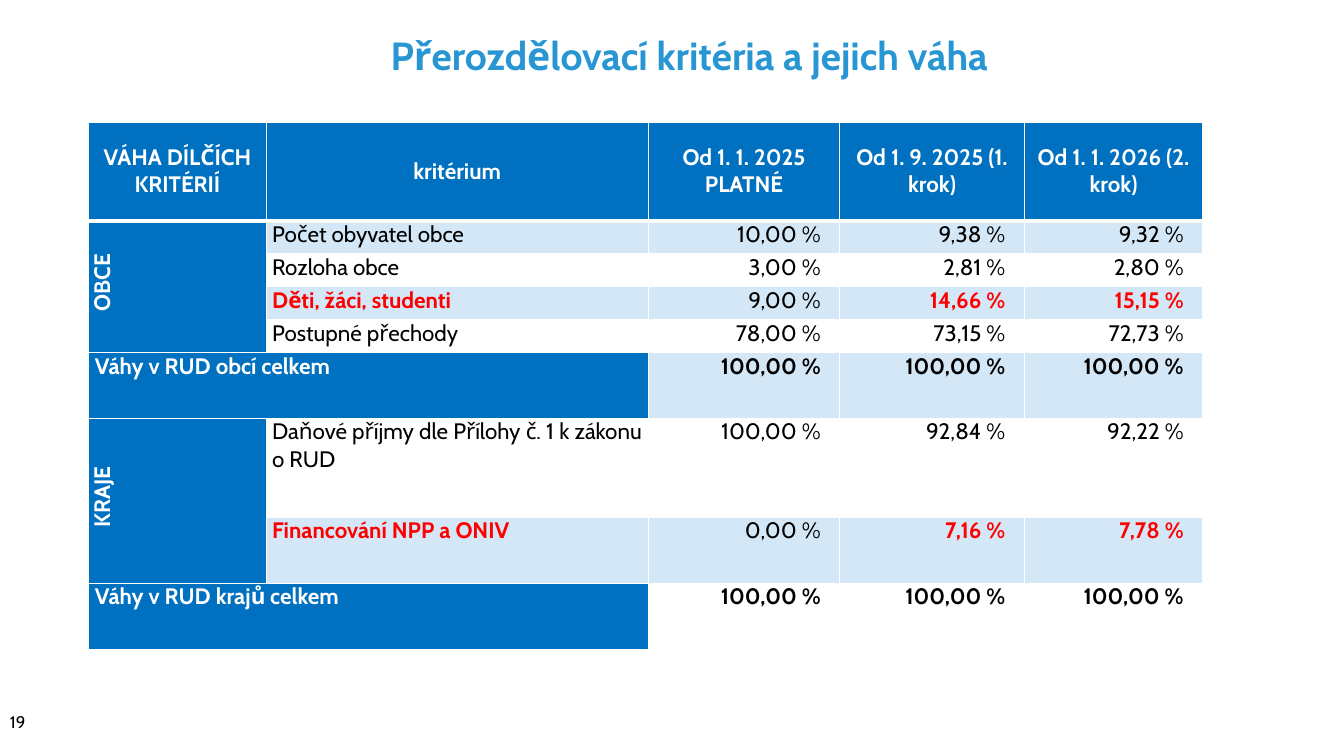
from lxml.etree import SubElement
from pptx import Presentation
from pptx.dml.color import RGBColor
from pptx.enum.text import MSO_ANCHOR as Anchor, PP_ALIGN as Align
from pptx.oxml.ns import qn
from pptx.util import Inches, Pt

TITLE = "Přerozdělovací kritéria a jejich váha"
PAGE_NUMBER = "19"
HEADERS = ["VÁHA DÍLČÍCH KRITÉRIÍ", "kritérium", "Od 1. 1. 2025 PLATNÉ",
           "Od 1. 9. 2025 (1. krok)", "Od 1. 1. 2026 (2. krok)"]
GROUPS = [
    ("OBCE", [
        ("Počet obyvatel obce", "10,00 %", "9,38 %", "9,32 %"),
        ("Rozloha obce", "3,00 %", "2,81 %", "2,80 %"),
        ("Děti, žáci, studenti", "9,00 %", "14,66 %", "15,15 %"),
        ("Postupné přechody", "78,00 %", "73,15 %", "72,73 %"),
    ], ("Váhy v RUD obcí celkem", "100,00 %", "100,00 %", "100,00 %")),
    ("KRAJE", [
        ("Daňové příjmy dle Přílohy č. 1 k zákonu o RUD", "100,00 %", "92,84 %", "92,22 %"),
        ("Financování NPP a ONIV", "0,00 %", "7,16 %", "7,78 %"),
    ], ("Váhy v RUD krajů celkem", "100,00 %", "100,00 %", "100,00 %")),
]
CHANGED = {"Děti, žáci, studenti", "Financování NPP a ONIV"}

FONT = "Cabin"
BLUE, LIGHT, WHITE, BLACK, RED = "0070C0", "D4E7F7", "FFFFFF", "000000", "FF0000"
TITLE_BLUE = "2896D3"
COLUMN_WIDTHS = [1.76, 3.79, 1.9, 1.83, 1.77]
LINE = 0.327
ROW_LINES = [3, 1, 1, 1, 1, 2, 3, 2, 2]
CELL_MARGIN, NUMBER_MARGIN = 0.06, 0.19
TABLE_LEFT, TABLE_TOP = 0.88, 1.21


def color(value):
    return RGBColor.from_string(value)


def style(paragraph, size, ink, bold, alignment):
    paragraph.alignment = alignment
    font = paragraph.font
    font.name, font.size, font.bold = FONT, Pt(size), bold
    font.color.rgb = color(ink)


def add_borders(cell, row):
    properties = cell._tc.get_or_add_tcPr()
    widths = {"L": 1, "R": 1, "T": 3 if row == 1 else 1, "B": 3 if row == 0 else 1}
    for side, width in widths.items():
        line = SubElement(properties, qn(f"a:ln{side}"), w=str(Pt(width)))
        fill = SubElement(line, qn("a:solidFill"))
        SubElement(fill, qn("a:srgbClr"), val=WHITE)


def write(cell, text, ink, bold, alignment, anchor=Anchor.TOP, right=CELL_MARGIN):
    cell.text = text
    cell.vertical_anchor = anchor
    cell.margin_left, cell.margin_right = Inches(CELL_MARGIN), Inches(right)
    cell.margin_top = cell.margin_bottom = 0
    paragraph = cell.text_frame.paragraphs[0]
    paragraph.space_after = Pt(3)
    style(paragraph, 16, ink, bold, alignment)


def write_group(cell, name):
    write(cell, name, WHITE, True, Align.CENTER, Anchor.MIDDLE)
    cell._tc.get_or_add_tcPr().set("vert", "vert270")
    paragraph = cell.text_frame.paragraphs[0]
    paragraph.space_after = Pt(8)
    paragraph._p.get_or_add_pPr().set("marL", str(Inches(0.08)))


def write_numbers(table, row, values, inks, bolds):
    for column, (value, ink, bold) in enumerate(zip(values, inks, bolds), 2):
        write(table.cell(row, column), value, ink, bold, Align.RIGHT, right=NUMBER_MARGIN)


def paint(table):
    for row, table_row in enumerate(table.rows):
        for column, cell in enumerate(table_row.cells):
            add_borders(cell, row)
            solid = row == 0 or column == 0 or cell.is_spanned
            cell.fill.solid()
            cell.fill.fore_color.rgb = color(BLUE if solid else LIGHT if row % 2 else WHITE)


def add_weights(slide):
    heights = [LINE * lines for lines in ROW_LINES]
    table = slide.shapes.add_table(
        len(heights), len(COLUMN_WIDTHS), Inches(TABLE_LEFT), Inches(TABLE_TOP),
        Inches(sum(COLUMN_WIDTHS)), Inches(sum(heights))).table
    table.first_row = table.horz_banding = False
    for column, width in zip(table.columns, COLUMN_WIDTHS):
        column.width = Inches(width)
    for row, height in zip(table.rows, heights):
        row.height = Inches(height)
    for column, header in enumerate(HEADERS):
        write(table.cell(0, column), header, WHITE, True, Align.CENTER, Anchor.MIDDLE)

    row = 1
    for name, criteria, (total_name, *totals) in GROUPS:
        table.cell(row, 0).merge(table.cell(row + len(criteria) - 1, 0))
        write_group(table.cell(row, 0), name)
        for criterion, *values in criteria:
            changed = criterion in CHANGED
            ink = RED if changed else BLACK
            write(table.cell(row, 1), criterion, ink, changed, Align.JUSTIFY)
            write_numbers(table, row, values, [BLACK, ink, ink], [False, changed, changed])
            row += 1
        table.cell(row, 0).merge(table.cell(row, 1))
        write(table.cell(row, 0), total_name, WHITE, True, Align.JUSTIFY)
        write_numbers(table, row, totals, [BLACK] * 3, [True] * 3)
        row += 1
    paint(table)


def add_title(slide):
    title = slide.shapes.title
    title.left, title.top = Inches(TABLE_LEFT), 0
    title.width, title.height = Inches(11.81), Inches(1.08)
    frame = title.text_frame
    frame.text = TITLE
    frame.word_wrap = True
    frame.vertical_anchor = Anchor.MIDDLE
    frame.margin_left, frame.margin_right = Inches(0.2), Inches(0.1)
    style(frame.paragraphs[0], 28, TITLE_BLUE, True, Align.CENTER)


def add_page_number(slide):
    frame = slide.shapes.add_textbox(0, Inches(6.95), Inches(0.48), Inches(0.43)).text_frame
    frame.text = PAGE_NUMBER
    frame.word_wrap = True
    frame.vertical_anchor = Anchor.MIDDLE
    style(frame.paragraphs[0], 12, BLACK, False, Align.LEFT)


def main():
    presentation = Presentation()
    presentation.slide_width, presentation.slide_height = Inches(13.33), Inches(7.5)
    slide = presentation.slides.add_slide(presentation.slide_layouts[5])
    add_title(slide)
    add_weights(slide)
    add_page_number(slide)
    presentation.save("out.pptx")


if __name__ == "__main__":
    main()
